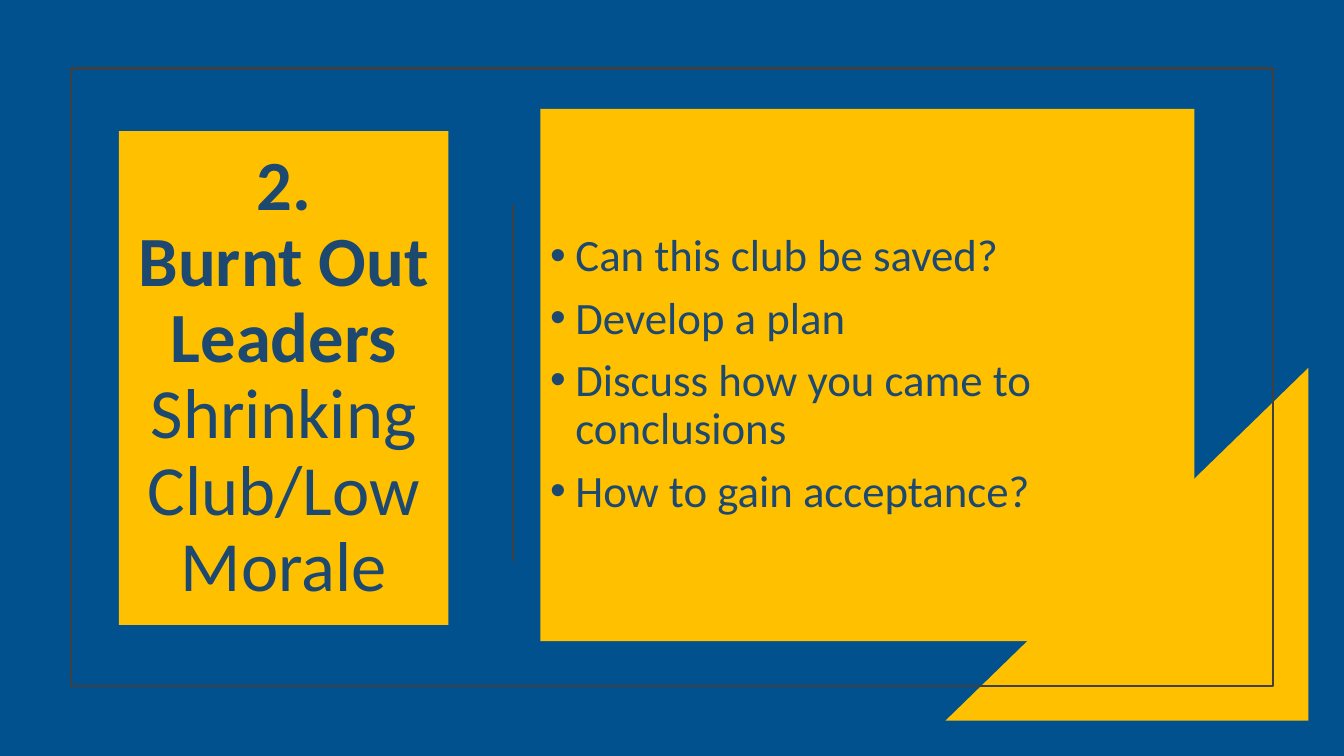
from pptx import Presentation
from pptx.dml.color import RGBColor
from pptx.enum.shapes import MSO_CONNECTOR, MSO_SHAPE
from pptx.enum.text import MSO_ANCHOR, PP_ALIGN
from pptx.oxml.ns import qn
from pptx.util import Inches, Pt
from lxml import etree

RECTANGLE = MSO_SHAPE.RECTANGLE
RIGHT_TRIANGLE = MSO_SHAPE.RIGHT_TRIANGLE
STRAIGHT = MSO_CONNECTOR.STRAIGHT
MIDDLE = MSO_ANCHOR.MIDDLE
LEFT, CENTER = PP_ALIGN.LEFT, PP_ALIGN.CENTER

COLORS = {"ground": "00518E", "panel": "FFC000", "rule": "404040", "ink": "1D4971"}
COLUMNS, ROWS = 160, 90


class ClubSlide:
    font = "Calibri"
    rule_width = Pt(1.5)
    line_spacing = 0.9

    def __init__(self, deck):
        self.column = deck.slide_width / COLUMNS
        self.row = deck.slide_height / ROWS
        self.slide = deck.slides.add_slide(deck.slide_layouts[6])
        self.paint(self.slide.background.fill, "ground")

    def paint(self, fill, color):
        fill.solid()
        fill.fore_color.rgb = RGBColor.from_string(COLORS[color])

    def place(self, x, y):
        return round(x * self.column), round(y * self.row)

    def block(self, left, top, width, height, kind=RECTANGLE):
        shape = self.slide.shapes.add_shape(
            kind, *self.place(left, top), *self.place(width, height))
        shape.shadow.inherit = False
        return shape

    def panel(self, *box, kind=RECTANGLE):
        panel = self.block(*box, kind=kind)
        self.paint(panel.fill, "panel")
        panel.line.fill.background()
        return panel

    def corner(self, *box):
        corner = self.panel(*box, kind=RIGHT_TRIANGLE)
        corner._element.spPr.find(qn("a:xfrm")).set("flipH", "1")

    def frame(self, *box):
        frame = self.block(*box)
        frame.fill.background()
        self.stroke(frame.line)

    def stroke(self, line):
        self.paint(line.fill, "rule")
        line.width = self.rule_width

    def divider(self, x, top, bottom):
        divider = self.slide.shapes.add_connector(
            STRAIGHT, *self.place(x, top), *self.place(x, bottom))
        self.stroke(divider.line)
        etree.SubElement(divider._element.spPr, qn("a:effectLst"))

    def fill_text(self, panel, lines, size, align):
        frame = panel.text_frame
        frame.word_wrap = True
        frame.vertical_anchor = MIDDLE
        frame.text = lines[0]
        for line in lines[1:]:
            frame.add_paragraph().text = line
        for paragraph in frame.paragraphs:
            paragraph.alignment = align
            paragraph.line_spacing = self.line_spacing
            for run in paragraph.runs:
                run.font.name = self.font
                run.font.size = Pt(size)
                self.paint(run.font.fill, "ink")
        return frame.paragraphs

    def title(self, box, bold_lines, plain_line):
        text = "\v".join([*bold_lines, plain_line])
        heading = self.fill_text(self.panel(*box), [text], 50.4, CENTER)[0]
        for run in heading.runs:
            run.font.bold = run.text in bold_lines

    def bullets(self, box, points):
        for point in self.fill_text(self.panel(*box), points, 32, LEFT):
            point.space_before = Pt(10)
            properties = point._p.get_or_add_pPr()
            properties.set("marL", str(Inches(0.25)))
            properties.set("indent", str(-Inches(0.25)))
            etree.SubElement(properties, qn("a:buFont"), typeface="Arial")
            etree.SubElement(properties, qn("a:buChar"), char="•")


def main():
    deck = Presentation()
    deck.slide_width, deck.slide_height = Inches(13.33), Inches(7.5)
    club = ClubSlide(deck)
    club.corner(112.56, 43.8, 43.2, 42)
    club.frame(8.4, 8.16, 143.16, 73.56)
    club.title((14.16, 15.6, 39.24, 58.8),
               ["2.", "Burnt Out Leaders"], "Shrinking Club/Low Morale")
    club.divider(61.08, 24.36, 66.84)
    club.bullets((64.32, 12.96, 77.88, 63.36), [
        "Can this club be saved?",
        "Develop a plan",
        "Discuss how you came to conclusions",
        "How to gain acceptance?",
    ])
    deck.save("out.pptx")


if __name__ == "__main__":
    main()
